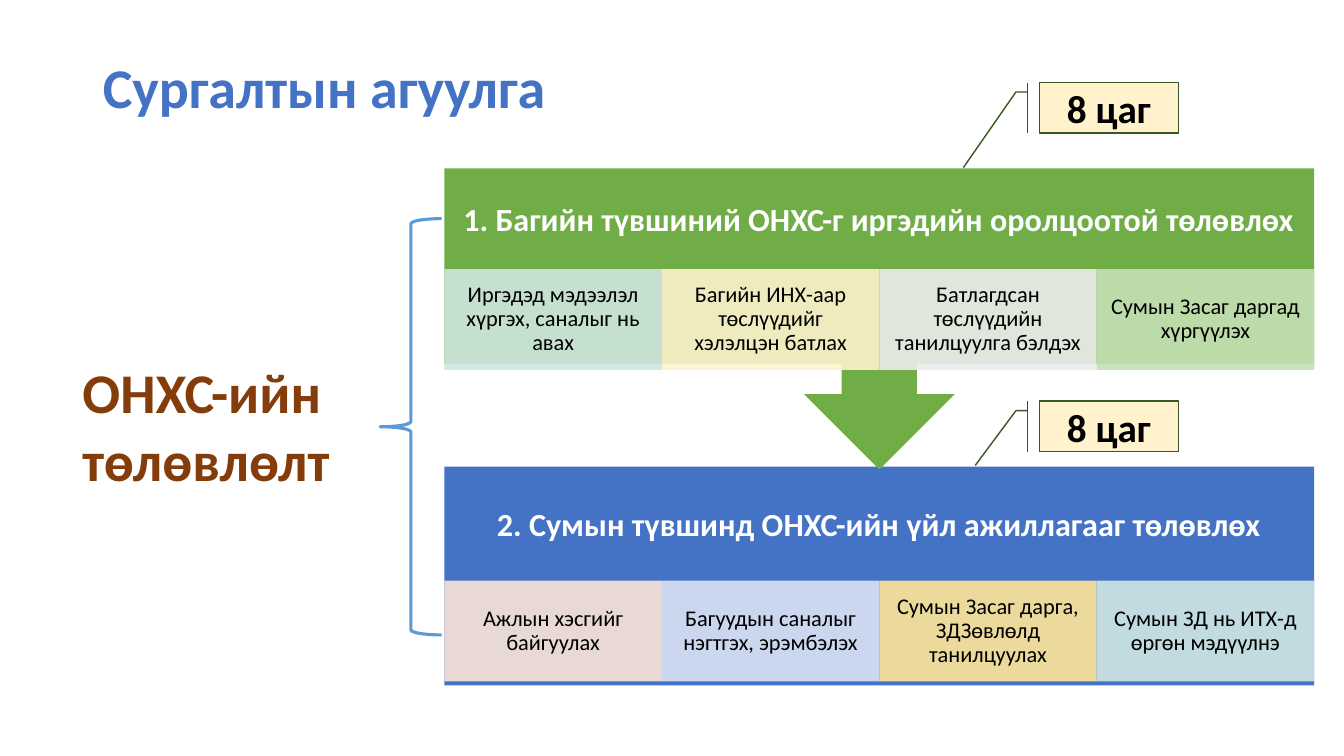
from lxml import etree
from pptx import Presentation
from pptx.dml.color import RGBColor
from pptx.enum.shapes import MSO_SHAPE
from pptx.enum.text import MSO_ANCHOR, MSO_AUTO_SIZE, PP_ALIGN
from pptx.oxml.ns import qn
from pptx.util import Cm, Pt

RECT = MSO_SHAPE.RECTANGLE
ARROW_CALLOUT = MSO_SHAPE.UP_ARROW_CALLOUT
BRACE = MSO_SHAPE.LEFT_BRACE
LINE_CALLOUT = MSO_SHAPE.LINE_CALLOUT_2_BORDER_AND_ACCENT_BAR
MIDDLE, TOP = MSO_ANCHOR.MIDDLE, MSO_ANCHOR.TOP
LEFT, CENTER = PP_ALIGN.LEFT, PP_ALIGN.CENTER
NO_AUTOFIT = MSO_AUTO_SIZE.NONE

BLUE, GREEN, WHITE, BLACK = "4472C4", "70AD47", "FFFFFF", "000000"
TITLE_FORMAT = {"size": Pt(40), "bold": True, "name": "Calibri"}
HEADER_FORMAT = {"size": Pt(23), "bold": True, "name": "Calibri"}
STEP_FORMAT = {"size": Pt(16), "bold": False, "name": "Calibri"}
HOURS_FORMAT = {"size": Pt(28), "bold": True, "name": "Calibri"}

STAGE_LEFT, STAGE_WIDTH, STEP_HEIGHT = 11.2, 21.92, 2.54
STAGES = [
    {
        "shape": RECT, "rotation": 0, "color": BLUE,
        "top": 11.76, "height": 5.51, "header_height": 2.97, "steps_offset": 2.87,
        "header": "2. Сумын түвшинд ОНХС-ийн үйл ажиллагааг төлөвлөх",
        "steps": [
            ("Ажлын хэсгийг байгуулах", "FBE5D6"),
            ("Багуудын саналыг нэгтгэх, эрэмбэлэх", "DAE3F3"),
            ("Сумын Засаг дарга, ЗДЗөвлөлд танилцуулах", "FFE699"),
            ("Сумын ЗД нь ИТХ-д өргөн мэдүүлнэ", "CFE7E4"),
        ],
    },
    {
        "shape": ARROW_CALLOUT, "rotation": 180, "color": GREEN,
        "top": 4.24, "height": 7.59, "header_height": 2.67, "steps_offset": 2.54,
        "header": "1. Багийн түвшиний ОНХС-г иргэдийн оролцоотой төлөвлөх",
        "steps": [
            ("Иргэдэд мэдээлэл хүргэх, саналыг нь авах", "CFE6DD"),
            ("Багийн ИНХ-аар төслүүдийг хэлэлцэн батлах", "FFF2CC"),
            ("Батлагдсан төслүүдийн танилцуулга бэлдэх", "EDEDED"),
            ("Сумын Засаг даргад хүргүүлэх", "C5E0B4"),
        ],
    },
]
HOURS = [(2.08, 1.686, -0.544), (10.11, 1.274, -0.459)]


def rgb(value):
    return RGBColor.from_string(value)


def write(sp, text, color, font, align=CENTER, anchor=MIDDLE, spacing=1.0, insets=(0.25, 0.13)):
    tf = sp.text_frame
    x, y = map(Cm, insets)
    frame = {
        "word_wrap": True, "auto_size": NO_AUTOFIT, "vertical_anchor": anchor,
        "margin_left": x, "margin_right": x, "margin_top": y, "margin_bottom": y,
    }
    for name, value in frame.items():
        setattr(tf, name, value)
    p = tf.paragraphs[0]
    p.alignment, p.line_spacing = align, spacing
    r = p.add_run()
    r.text = text
    for name, value in font.items():
        setattr(r.font, name, value)
    r.font.color.rgb = rgb(color)


def add_shape(s, kind, box, fill=None, line=None, weight=1, opacity=100):
    sp = s.shapes.add_shape(kind, *map(Cm, box))
    sp.shadow.inherit = False
    if fill:
        sp.fill.solid()
        sp.fill.fore_color.rgb = rgb(fill)
        if opacity < 100:
            color = sp._element.spPr.find(qn("a:solidFill")).find(qn("a:srgbClr"))
            etree.SubElement(color, qn("a:alpha")).set("val", str(opacity * 1000))
    else:
        sp.fill.background()
    if line:
        sp.line.color.rgb = rgb(line)
        sp.line.width = Pt(weight)
    else:
        sp.line.fill.background()
    return sp


def add_title(s, box):
    sp = s.shapes.title
    sp.left, sp.top, sp.width, sp.height = map(Cm, box)
    write(sp, "Сургалтын агуулга", BLUE, TITLE_FORMAT, align=LEFT, spacing=0.9)


def add_stage(s, box, stage):
    left, top, width, height = box
    add_shape(s, stage["shape"], box, stage["color"]).rotation = stage["rotation"]
    header = s.shapes.add_textbox(*map(Cm, (left, top, width, stage["header_height"])))
    write(header, stage["header"], WHITE, HEADER_FORMAT, spacing=0.9, insets=(0.46, 0.46))
    step_width = width / len(stage["steps"])
    for i, (text, fill) in enumerate(stage["steps"]):
        step_box = (left + i * step_width, top + stage["steps_offset"], step_width, STEP_HEIGHT)
        sp = add_shape(s, RECT, step_box, fill, opacity=90)
        write(sp, text, BLACK, STEP_FORMAT, spacing=0.9, insets=(0.3, 0.05))


def add_topic(s, box):
    left, top, width, height = box
    add_shape(s, BRACE, (left + 7.75, top, 1.55, height), line="5B9BD5", weight=2.25)
    sp = s.shapes.add_textbox(*map(Cm, (left, top + 3.38, width, 3.68)))
    write(sp, "ОНХС-ийн төлөвлөлт", "843C0B", TITLE_FORMAT, align=LEFT, anchor=TOP)


def add_hours(s, box, tip_y, tip_x):
    sp = add_shape(s, LINE_CALLOUT, box, "FFF2CC", "385723")
    for i, value in enumerate((0.188, -0.083, 0.188, -0.167, tip_y, tip_x)):
        sp.adjustments[i] = value
    write(sp, "8 цаг", BLACK, HOURS_FORMAT)


def main():
    prs = Presentation()
    prs.slide_width, prs.slide_height = Cm(33.87), Cm(19.05)
    s = prs.slides.add_slide(prs.slide_layouts[5])
    add_title(s, (2.34, 1.02, 29.21, 2.49))
    for stage in STAGES:
        add_stage(s, (STAGE_LEFT, stage["top"], STAGE_WIDTH, stage["height"]), stage)
    add_topic(s, (1.83, 5.51, 7.19, 10.49))
    for top, tip_y, tip_x in HOURS:
        add_hours(s, (26.19, top, 3.51, 1.27), tip_y, tip_x)
    prs.save("out.pptx")


if __name__ == "__main__":
    main()
